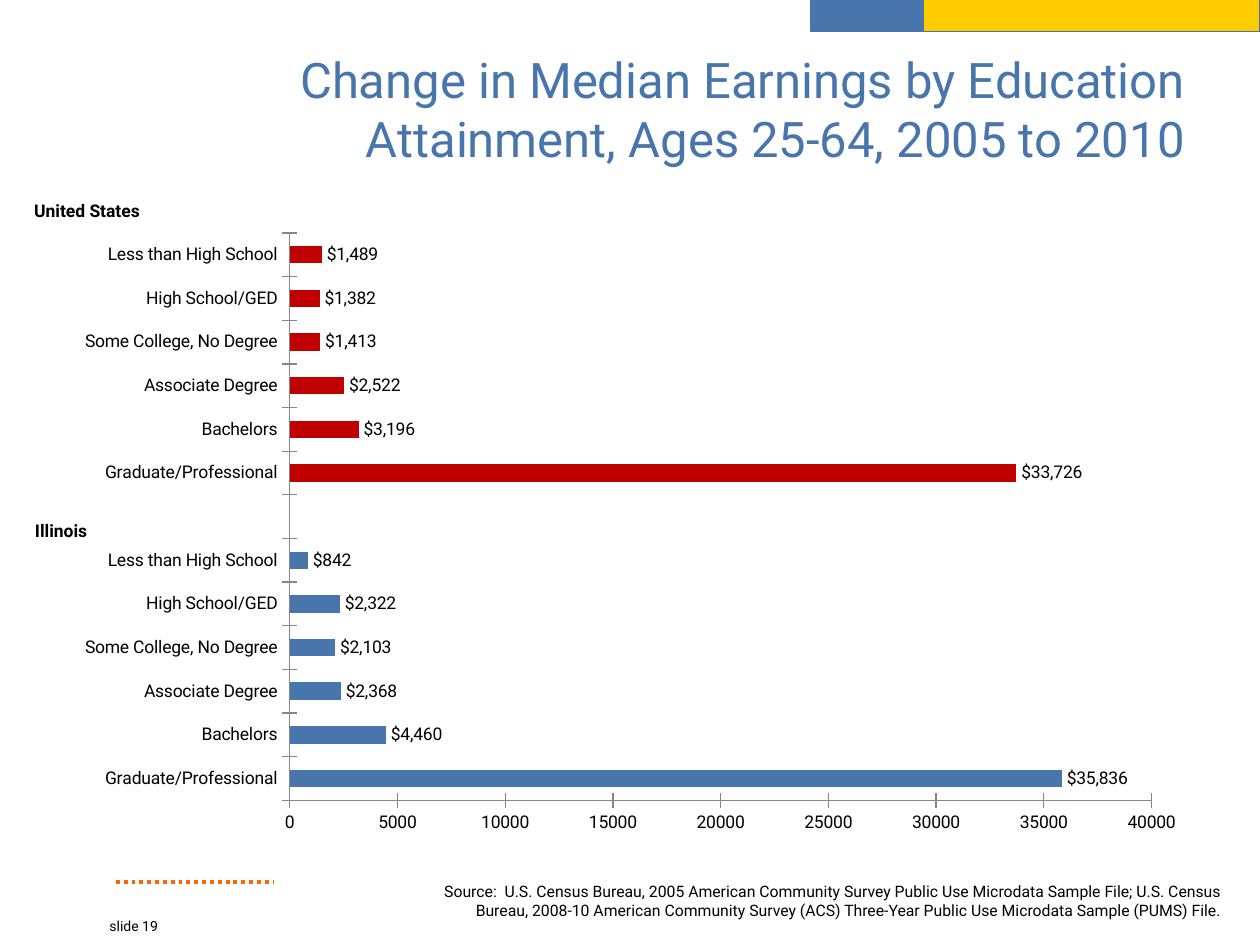
import pptx
import pptx.util
import pptx.chart.data
import pptx.dml.color
import pptx.enum.chart
import pptx.enum.dml
import pptx.enum.shapes
import pptx.enum.text
import pptx.oxml
import pptx.oxml.ns
from pptx.util import Inches

BLUE = pptx.dml.color.RGBColor(0x49, 0x75, 0xAD)
YELLOW = pptx.dml.color.RGBColor(0xFF, 0xCC, 0x00)
ORANGE = pptx.dml.color.RGBColor(0xFF, 0x66, 0x00)
RED = pptx.dml.color.RGBColor(0xC0, 0x00, 0x00)
GREY = pptx.dml.color.RGBColor(0x86, 0x86, 0x86)
BLACK = pptx.dml.color.RGBColor(0, 0, 0)
ALIGN = pptx.enum.text.PP_ALIGN
FONT = "Roboto"


def set_font(font, size, color=BLACK, bold=False):
    font.name = FONT
    font.size = pptx.util.Pt(size)
    font.color.rgb = color
    font.bold = bold


def add_text(s, text, left, top, width, height, size, align, bold=False, wrap=True):
    tf = s.shapes.add_textbox(Inches(left), Inches(top), Inches(width), Inches(height)).text_frame
    tf.word_wrap = wrap
    p = tf.paragraphs[0]
    p.text = text
    p.alignment = align
    set_font(p.font, size, bold=bold)


prs = pptx.Presentation()
prs.slide_width, prs.slide_height = Inches(10), Inches(7.5)
s = prs.slides.add_slide(prs.slide_layouts[5])

# Dotted rule at the foot
rule = s.shapes.add_connector(pptx.enum.shapes.MSO_CONNECTOR.STRAIGHT,
                              Inches(0.92), Inches(7), Inches(2.17), Inches(7))
rule.line.color.rgb = ORANGE
rule.line.width = pptx.util.Pt(2.25)
rule.line.dash_style = pptx.enum.dml.MSO_LINE.ROUND_DOT
pptx.oxml.ns  # namespaces used below
rule._element.spPr.append(pptx.oxml.parse_xml(
    "<a:effectLst %s/>" % pptx.oxml.ns.nsdecls("a")))

# Colour bands at the top right
for left, width, color in ((6.43, 0.91, BLUE), (7.33, 2.67, YELLOW)):
    band = s.shapes.add_shape(pptx.enum.shapes.MSO_SHAPE.RECTANGLE,
                              Inches(left), Inches(-0.01), Inches(width), Inches(0.26))
    band.shadow.inherit = False
    band.fill.solid()
    band.fill.fore_color.rgb = color
    band.line.color.rgb = BLUE
    band.line.width = pptx.util.Pt(0.75)

# Title
title = s.shapes.title
title.left, title.top, title.width, title.height = Inches(0.5), Inches(0.3), Inches(9), Inches(1.12)
tf = title.text_frame
tf.text = "Change in Median Earnings by Education Attainment, Ages 25-64, 2005 to 2010"
tf.auto_size = pptx.enum.text.MSO_AUTO_SIZE.NONE
tf.vertical_anchor = pptx.enum.text.MSO_ANCHOR.MIDDLE
p = tf.paragraphs[0]
p.alignment = ALIGN.RIGHT
set_font(p.font, 28, BLUE)

# Chart data: Illinois below, United States above, one empty row between
levels = ["Graduate/Professional", "Bachelors", "Associate Degree",
          "Some College, No Degree", "High School/GED", "Less than High School"]
illinois = [35836, 4460, 2368, 2103, 2322, 842]
united_states = [33726, 3196, 2522, 1413, 1382, 1489]
data = pptx.chart.data.CategoryChartData()
data.categories = levels + [""] + levels
data.add_series("Series 1", illinois + [None] + united_states)
chart = s.shapes.add_chart(pptx.enum.chart.XL_CHART_TYPE.BAR_CLUSTERED, Inches(0.5), Inches(1.75),
                           Inches(9), Inches(4.95), data).chart
chart.has_legend = False
chart.has_title = False
set_font(chart.font, 10)

# Bars and labels
plot = chart.plots[0]
plot.vary_by_categories = False
plot.gap_width = 150
series = plot.series[0]
series.format.fill.solid()
series.format.fill.fore_color.rgb = BLUE
for i in range(len(illinois) + 1, len(illinois) + 1 + len(united_states)):
    fill = series.points[i].format.fill
    fill.solid()
    fill.fore_color.rgb = RED
labels = series.data_labels
labels.show_value = True
labels.number_format = '"$"#,##0'
labels.number_format_is_linked = False
labels.position = pptx.enum.chart.XL_LABEL_POSITION.OUTSIDE_END
set_font(labels.font, 10)

# Axes
for axis in (chart.category_axis, chart.value_axis):
    axis.has_major_gridlines = False
    axis.major_tick_mark = pptx.enum.chart.XL_TICK_MARK.CROSS
    axis.minor_tick_mark = pptx.enum.chart.XL_TICK_MARK.NONE
    axis.format.line.color.rgb = GREY
    axis.format.line.width = pptx.util.Pt(0.75)
    set_font(axis.tick_labels.font, 10)
axis = chart.value_axis
axis.minimum_scale, axis.maximum_scale, axis.major_unit = 0, 40000, 5000
axis.tick_labels.number_format = "0"
axis.tick_labels.number_format_is_linked = False

# Fixed plot area
area = chart._chartSpace.chart.plotArea
for old in area.findall(pptx.oxml.ns.qn("c:layout")):
    area.remove(old)
area.insert(0, pptx.oxml.parse_xml(
    '<c:layout %s><c:manualLayout><c:layoutTarget val="inner"/>'
    '<c:xMode val="edge"/><c:yMode val="edge"/><c:x val="0.2"/><c:y val="0.02"/>'
    '<c:w val="0.76"/><c:h val="0.91"/></c:manualLayout></c:layout>' % pptx.oxml.ns.nsdecls("c")))

# Slide number, group headings and source
add_text(s, "slide 19", 0.77, 7.23, 1, 0.27, 8, ALIGN.LEFT)
add_text(s, "United States", 0.15, 1.54, 1.08, 0.27, 10, ALIGN.CENTER, bold=True, wrap=False)
add_text(s, "Illinois", 0.17, 4.08, 0.63, 0.27, 10, ALIGN.CENTER, bold=True, wrap=False)
add_text(s, "Source:  U.S. Census Bureau, 2005 American Community Survey Public Use Microdata "
            "Sample File; U.S. Census Bureau, 2008-10 American Community Survey (ACS) Three-Year "
            "Public Use Microdata Sample (PUMS) File.", 3.36, 6.95, 6.42, 0.4, 9, ALIGN.RIGHT)

prs.save("out.pptx")
